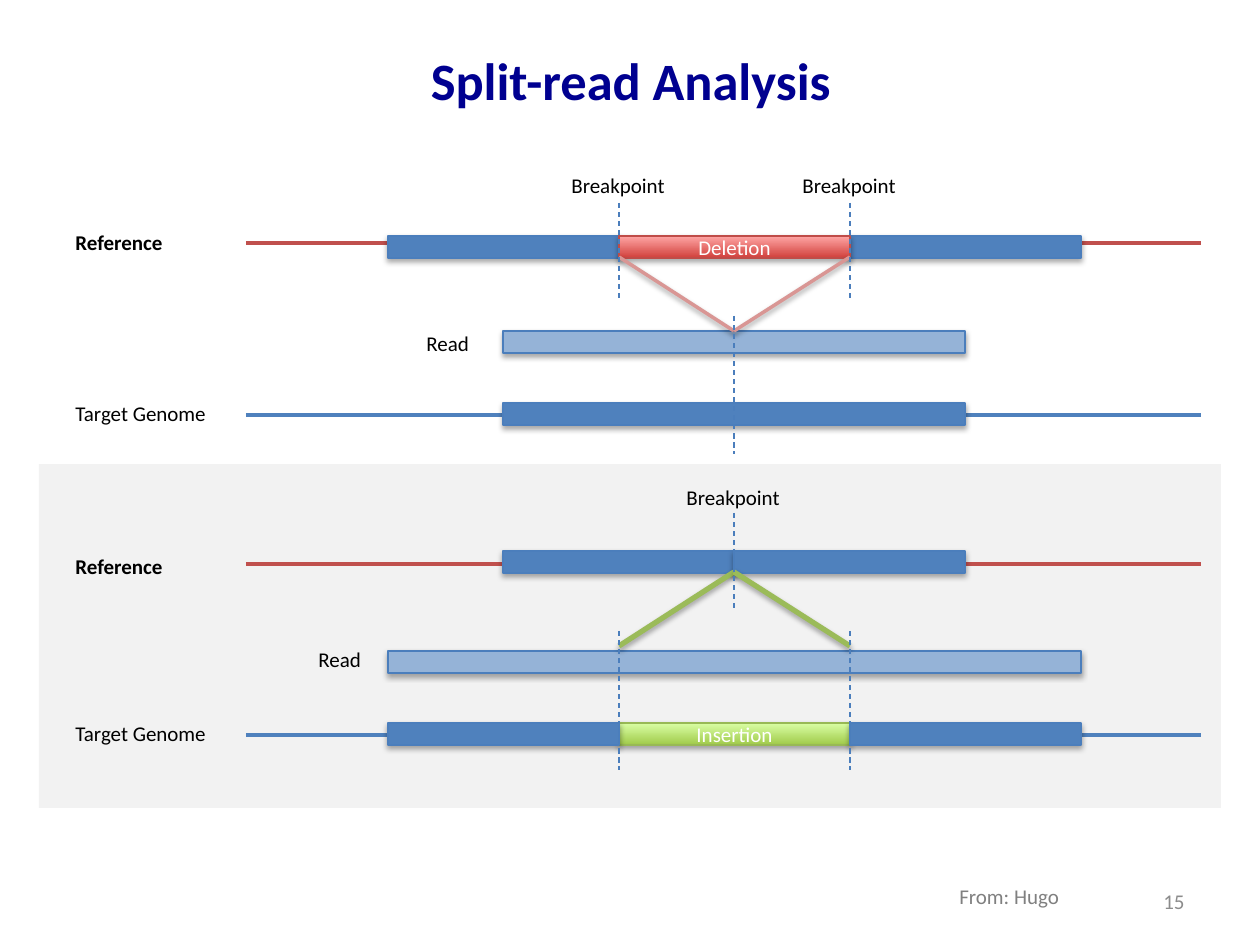
from lxml import etree
from pptx import Presentation, util as u
from pptx.dml.color import RGBColor
from pptx.enum import dml, shapes, text
from pptx.oxml.ns import qn

PX = 914400 / 126
BLUE, EDGE, PALE, RED, GREEN = "4F81BD", "4B7EBC", "95B3D7", "C0504D", "9BBB59"
BAR_H, LABEL_H = 22, 38
COLS = [349 + 231 * n // 2 for n in range(7)]
AXIS = (207, 1162)
DELETED = {"stops": ("D1403C", "FFA6A5"), "edge": "BF4C48"}
INSERTED = {"stops": ("A0CA4A", "DAFFA5"), "edge": "98B955"}


def px(n):
    """Turn pixels into EMU."""
    return u.Emu(round(n * PX))


def rgb(value):
    """Turn a hex string into a colour."""
    return RGBColor.from_string(value)


def assign(obj, values):
    """Set attributes from a dict of format values."""
    for name, value in values.items():
        setattr(obj, name, value)


def effect(sp, shadow, alpha=35):
    """Give a shape or connector a soft drop shadow, or none."""
    effects = etree.SubElement(sp._element.spPr, qn("a:effectLst"))
    if shadow:
        outer = etree.SubElement(effects, qn("a:outerShdw"), blurRad="40000",
                                 dist="23000", dir="5400000", rotWithShape="0")
        color = etree.SubElement(outer, qn("a:srgbClr"), val="000000")
        etree.SubElement(color, qn("a:alpha"), val=str(alpha * 1000))


def write(sp, words, color="000000", size=12, bold=False, align="LEFT", **frame):
    """Write one formatted paragraph into a shape."""
    tf = sp.text_frame
    assign(tf, frame)
    p = tf.paragraphs[0]
    p.alignment = getattr(text.PP_ALIGN, align)
    r = p.add_run()
    r.text = words
    assign(r.font, {"name": "Calibri", "size": u.Pt(size), "bold": bold})
    r.font.color.rgb = rgb(color)


def label(s, box, words, **style):
    """Add a text box that fits its single line."""
    sp = s.shapes.add_textbox(*map(px, box))
    fit = {"word_wrap": False, "auto_size": text.MSO_AUTO_SIZE.SHAPE_TO_FIT_TEXT}
    write(sp, words, **{**fit, **style})


def line(s, box, start, end, color, width, dash=False, shadow=False):
    """Draw a straight line between two points of the box."""
    x, y = box[:2]
    ends = (x + start[0], y + start[1], x + end[0], y + end[1])
    sp = s.shapes.add_connector(shapes.MSO_CONNECTOR.STRAIGHT, *map(px, ends))
    sp.line.color.rgb = rgb(color)
    sp.line.width = u.Pt(width)
    if dash:
        sp.line.dash_style = dml.MSO_LINE.DASH
    effect(sp, shadow)


def bar(s, box, first, last, top, fill=BLUE, words=None, stops=None, edge=EDGE):
    """Draw a sequence bar from one column to another."""
    x, y = box[:2]
    place = (x + COLS[first], y + top, COLS[last] - COLS[first], BAR_H)
    sp = s.shapes.add_shape(shapes.MSO_SHAPE.RECTANGLE, *map(px, place))
    if stops:
        sp.fill.gradient()
        sp.fill.gradient_angle = 90
        for stop, color in zip(sp.fill.gradient_stops, stops):
            stop.color.rgb = rgb(color)
    else:
        sp.fill.solid()
        sp.fill.fore_color.rgb = rgb(fill)
    sp.line.color.rgb = rgb(edge)
    sp.line.width = u.Pt(0.75)
    effect(sp, True)
    if words:
        write(sp, words, color="FFFFFF", align="CENTER",
              vertical_anchor=text.MSO_ANCHOR.MIDDLE)


def axes(s, box, reference, target):
    """Draw the reference and target genome lines."""
    for y, color in ((reference, RED), (target, BLUE)):
        line(s, box, (AXIS[0], y), (AXIS[1], y), color, 2.25)


def row_labels(s, box, reference, read, target):
    """Name the three rows; read is an x, y pair."""
    x, y = box[:2]
    label(s, (x + 24, y + reference, 113, LABEL_H), "Reference", bold=True)
    label(s, (x + read[0], y + read[1], 68, LABEL_H), "Read")
    label(s, (x + 24, y + target, 157, LABEL_H), "Target Genome")


def links(s, box, apex, base, color, width):
    """Join the centre column to the two outer breakpoints."""
    for col in (2, 4):
        line(s, box, (COLS[3], apex), (COLS[col], base), color, width, shadow=True)


def guides(s, box, cols, top, bottom):
    """Draw dashed guides down the given columns."""
    for col in cols:
        line(s, box, (COLS[col], top), (COLS[col], bottom), EDGE, 0.75, dash=True)


def breakpoints(s, box, cols, top, guide_top):
    """Label the breakpoints and draw their guides."""
    for col in cols:
        place = (box[0] + COLS[col] - 60, box[1] + top, 120, LABEL_H)
        label(s, place, "Breakpoint")
    guides(s, box, cols, guide_top, guide_top + 99)


def deletion_panel(s, box):
    """Draw the reads that span a deletion."""
    axes(s, box, 93, 265)
    bar(s, box, 0, 2, 86)
    bar(s, box, 4, 6, 86)
    bar(s, box, 2, 4, 86, words="Deletion", **DELETED)
    bar(s, box, 1, 5, 181, PALE)
    bar(s, box, 1, 5, 253)
    links(s, box, 181, 107, "D99694", 2)
    row_labels(s, box, 73, (375, 174), 244)
    breakpoints(s, box, (2, 4), 16, 53)
    guides(s, box, (3,), 166, 304)


def insertion_panel(s, box):
    """Draw the reads that span an insertion on a grey panel."""
    sp = s.shapes.add_shape(shapes.MSO_SHAPE.RECTANGLE, *map(px, box))
    sp.fill.solid()
    sp.fill.fore_color.rgb = rgb("F2F2F2")
    sp.line.fill.background()
    sp.shadow.inherit = False
    axes(s, box, 100, 271)
    bar(s, box, 1, 3, 87)
    bar(s, box, 3, 5, 87)
    bar(s, box, 0, 6, 187, PALE)
    bar(s, box, 2, 4, 259, words="Insertion", **INSERTED)
    bar(s, box, 0, 2, 259)
    bar(s, box, 4, 6, 259)
    links(s, box, 108, 182, GREEN, 3)
    row_labels(s, box, 83, (267, 176), 250)
    breakpoints(s, box, (3,), 14, 49)
    guides(s, box, (2, 4), 167, 306)


def title(s, box):
    """Write the slide title."""
    label(s, box, "Split-read Analysis", color="000090", size=30, bold=True,
          align="CENTER", word_wrap=True, auto_size=text.MSO_AUTO_SIZE.NONE,
          vertical_anchor=text.MSO_ANCHOR.MIDDLE)


def footer(s, box):
    """Write the credit and the page number."""
    x, y, w, h = box
    label(s, (x + 44, y + 1, 127, LABEL_H), "From: Hugo", color="808080")
    label(s, (x, y, w, h), "15", color="8C8C8C", align="RIGHT", word_wrap=True,
          auto_size=text.MSO_AUTO_SIZE.NONE,
          vertical_anchor=text.MSO_ANCHOR.MIDDLE)


def main():
    """Build and save the slide."""
    prs = Presentation()
    assign(prs, {"slide_width": px(1260), "slide_height": px(945)})
    s = prs.slides.add_slide(prs.slide_layouts[6])
    title(s, (64, 0, 1134, 158))
    deletion_panel(s, (39, 150, 1182, 314))
    insertion_panel(s, (39, 464, 1182, 344))
    footer(s, (903, 876, 294, 50))
    prs.save("out.pptx")


if __name__ == "__main__":
    main()
